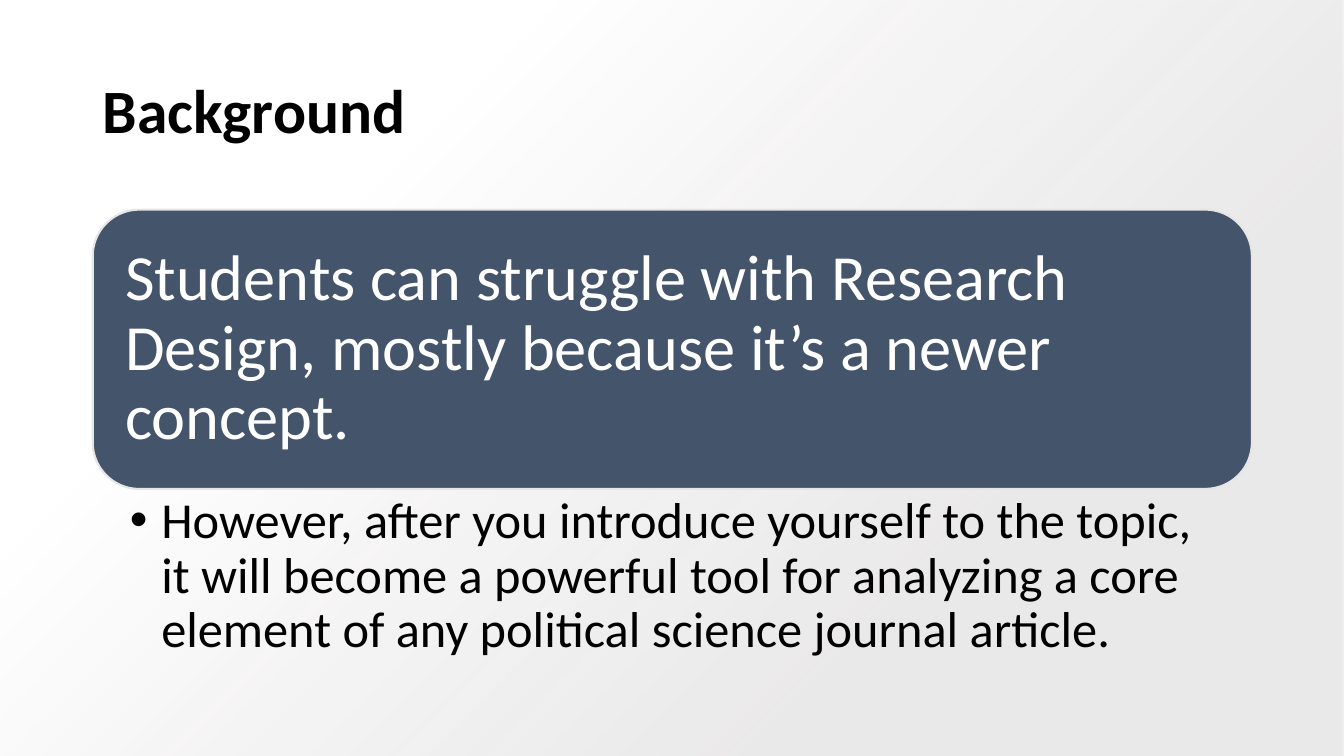
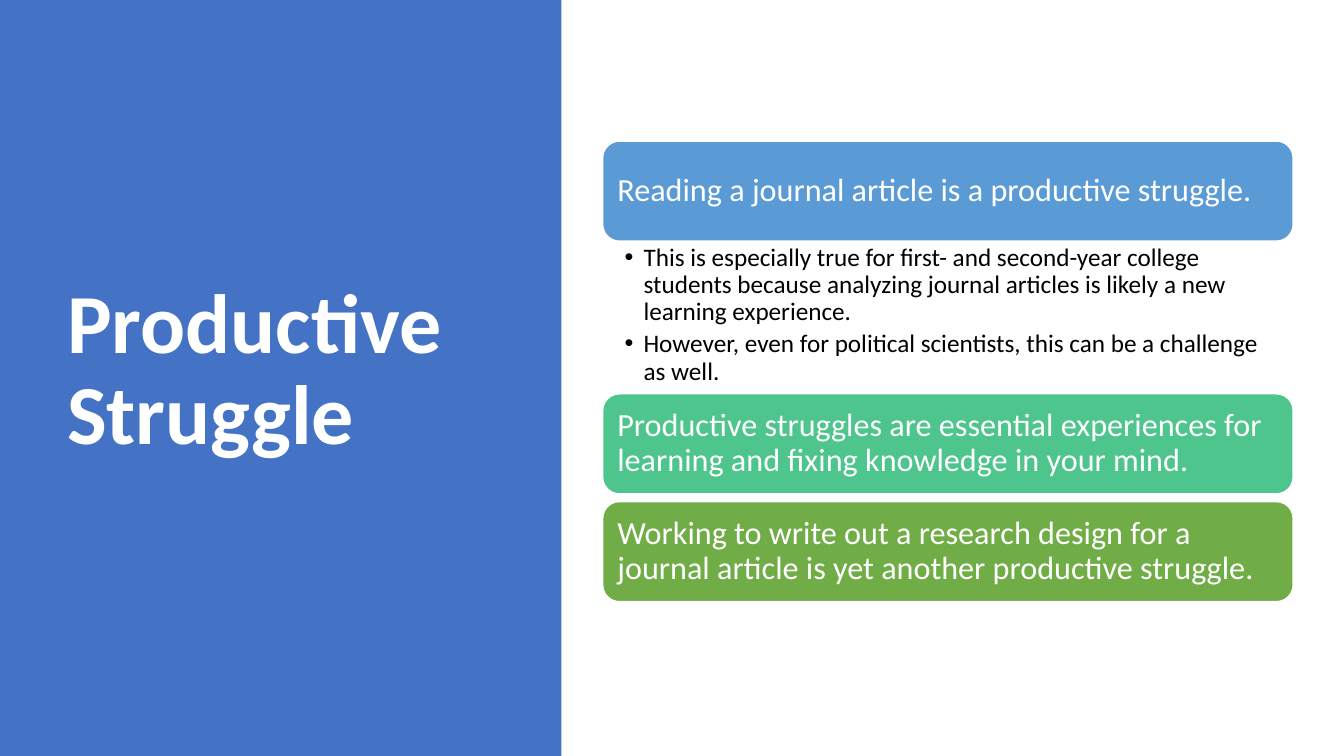
"""Build two slides whose ideas are stacked as rounded cards with bullets."""
from lxml import etree
from pptx import Presentation
from pptx.dml.color import RGBColor
from pptx.enum import shapes, text
from pptx.oxml.ns import qn
from pptx.util import Pt

WIDTH, HEIGHT = 960, 540
FONT = "Calibri"
WHITE, BLACK, BLUE, GREY = "FFFFFF", "000000", "4472C4", "E7E6E6"

BACKGROUND = {
    "title": ("Background", (66.25, 28.8, 828, 104.4), 44, BLACK),
    "stack": {"left": 66.25, "top": 149.75, "width": 828, "card": 199.5, "gap": 0,
              "size": 46, "inset": 13.5, "line": (GREY, 1.5),
              "list": 131, "list_size": 36, "list_insets": (26.5, 4.5, 25.6, 4.5), "indent": 22.5},
    "cards": [
        ("Students can struggle with Research Design, mostly because it’s a newer concept.", "44546A",
         ["However, after you introduce yourself to the topic, it will become a powerful tool "
          "for analyzing a core element of any political science journal article."]),
    ],
}
STRUGGLE = {
    "title": ("Productive Struggle", (41, 49, 299.5, 433.5), 60, WHITE),
    "stack": {"left": 430.5, "top": 100.8, "width": 493.2, "card": 71.5, "gap": 5.5,
              "size": 23, "inset": 7, "line": (WHITE, 1),
              "list": 109, "list_size": 18, "list_insets": (15.7, 2.3, 12.8, 2.3), "indent": 13.5},
    "cards": [
        ("Reading a journal article is a productive struggle.", "5B9BD5",
         ["This is especially true for first- and second-year college students because "
          "analyzing journal articles is likely a new learning experience.",
          "However, even for political scientists, this can be a challenge as well."]),
        ("Productive struggles are essential experiences for learning and fixing knowledge "
         "in your mind.", "4DC58D", []),
        ("Working to write out a research design for a journal article is yet another "
         "productive struggle.", "70AD47", []),
    ],
}


def color(value):
    return RGBColor.from_string(value)


def add_box(page, kind, place, fill=None, line=None):
    box = page.shapes.add_shape(kind, *map(Pt, place))
    box.shadow.inherit = False
    if fill:
        box.fill.solid()
        box.fill.fore_color.rgb = color(fill)
    if line:
        box.line.color.rgb = color(line[0])
        box.line.width = Pt(line[1])
    else:
        box.line.fill.background()
    return box


def write(box, lines, size, ink, insets=(7.2, 3.6, 7.2, 3.6), bold=False, indent=0, middle=True):
    frame = box.text_frame
    frame.word_wrap = True
    frame.vertical_anchor = text.MSO_ANCHOR.MIDDLE if middle else text.MSO_ANCHOR.TOP
    frame.margin_left, frame.margin_top, frame.margin_right, frame.margin_bottom = map(Pt, insets)
    for number, line in enumerate(lines):
        para = frame.add_paragraph() if number else frame.paragraphs[0]
        para.text = line
        para.alignment = text.PP_ALIGN.LEFT
        para.line_spacing = 0.9
        para.font.name, para.font.size, para.font.bold = FONT, Pt(size), bold
        para.font.color.rgb = color(ink)
        if indent:
            para.space_after = Pt(size * 0.2)
            props = para._p.get_or_add_pPr()
            props.set("marL", str(Pt(indent)))
            props.set("indent", str(-Pt(indent)))
            bullet_font = etree.Element(qn("a:buFont"), typeface="Arial")
            bullet = etree.Element(qn("a:buChar"), char="•")
            props.find(qn("a:spcAft")).addnext(bullet_font)
            bullet_font.addnext(bullet)


def add_gradient(page):
    backdrop = add_box(page, shapes.MSO_SHAPE.RECTANGLE, (0, 0, WIDTH, HEIGHT))
    backdrop.fill.gradient()
    for stop, (position, shade) in zip(backdrop.fill.gradient_stops, [(0.28, GREY), (0.74, WHITE)]):
        stop.position = position
        stop.color.rgb = color(shade)
    gradient = backdrop._element.spPr.find(qn("a:gradFill"))
    etree.SubElement(next(gradient.iter(qn("a:srgbClr"))), qn("a:alpha"), val="84000")
    gradient.remove(gradient.find(qn("a:lin")))
    circle = etree.SubElement(gradient, qn("a:path"), path="circle")
    etree.SubElement(circle, qn("a:fillToRect"), l="100000", t="100000")


def add_panel(page):
    add_box(page, shapes.MSO_SHAPE.RECTANGLE, (0, 0, 401, HEIGHT), BLUE)


def add_stack(page, cards, style):
    left, top, width = style["left"], style["top"], style["width"]
    for heading, fill, bullets in cards:
        card = add_box(page, shapes.MSO_SHAPE.ROUNDED_RECTANGLE,
                       (left, top, width, style["card"]), fill, style["line"])
        write(card, [heading], style["size"], WHITE, [style["inset"]] * 4)
        top += style["card"]
        if bullets:
            box = page.shapes.add_textbox(*map(Pt, (left, top, width, style["list"])))
            write(box, bullets, style["list_size"], BLACK, style["list_insets"],
                  indent=style["indent"], middle=False)
            top += style["list"]
        else:
            top += style["gap"]


def add_page(deck, content, decorate):
    page = deck.slides.add_slide(deck.slide_layouts[6])
    decorate(page)
    title, place, size, ink = content["title"]
    write(page.shapes.add_textbox(*map(Pt, place)), [title], size, ink, bold=True)
    add_stack(page, content["cards"], content["stack"])


def main():
    deck = Presentation()
    deck.slide_width, deck.slide_height = Pt(WIDTH), Pt(HEIGHT)
    add_page(deck, BACKGROUND, add_gradient)
    add_page(deck, STRUGGLE, add_panel)
    deck.save("out.pptx")


if __name__ == "__main__":
    main()
